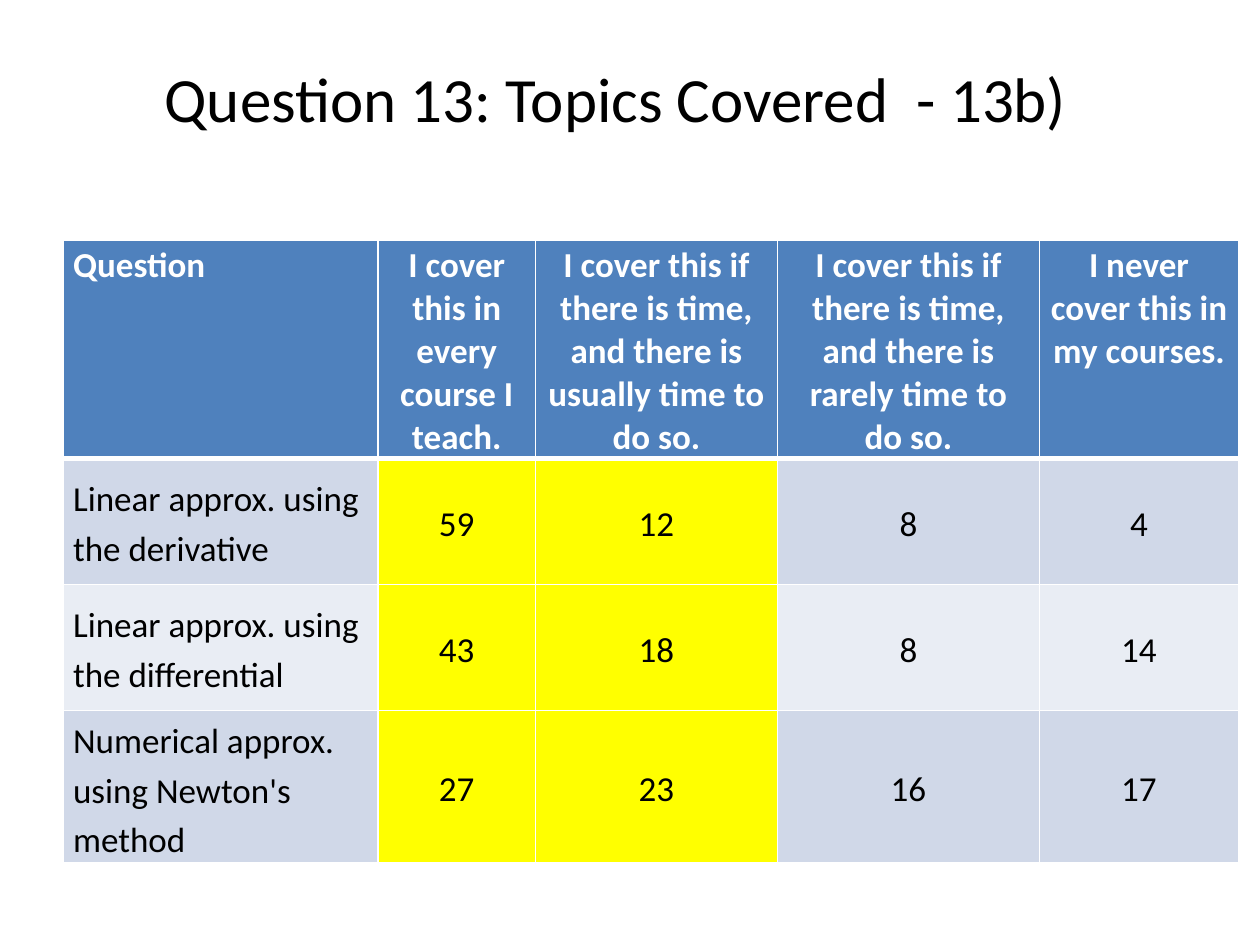
from lxml import etree
from pptx import Presentation
from pptx.dml.color import RGBColor
from pptx.enum.text import MSO_ANCHOR as ANCHOR, PP_ALIGN as ALIGN
from pptx.oxml.ns import qn
from pptx.util import Inches, Pt

COLORS = {
    "header": "4F81BD",
    "odd": "D0D8E8",
    "even": "E9EDF4",
    "highlight": "FFFF00",
    "white": "FFFFFF",
    "black": "000000",
}
FONT = "Calibri"


def add_run(p, text, size, color, bold=False):
    r = p.add_run()
    r.text = text
    r.font.name = FONT
    r.font.size = Pt(size)
    r.font.bold = bold
    r.font.color.rgb = RGBColor.from_string(COLORS[color])


def set_border(cell, side, width):
    ln = etree.SubElement(cell._tc.get_or_add_tcPr(), qn(f"a:ln{side}"), w=str(Pt(width)))
    fill = etree.SubElement(ln, qn("a:solidFill"))
    etree.SubElement(fill, qn("a:srgbClr"), val=COLORS["white"])


prs = Presentation()
prs.slide_width, prs.slide_height = Inches(10), Inches(7.5)
s = prs.slides.add_slide(prs.slide_layouts[6])

# Title
title = s.shapes.add_textbox(Inches(0.5), Inches(0.3), Inches(9), Inches(0.95))
tf = title.text_frame
tf.word_wrap = True
tf.vertical_anchor = ANCHOR.MIDDLE
p = tf.paragraphs[0]
p.alignment = ALIGN.CENTER
add_run(p, "Question 13: Topics Covered  - 13b)  ", 36, "black")

# Table of answers
rows = [
    ["Question",
     "I cover this in every course I teach.",
     "I cover this if there is time, and there is usually time to do so.",
     "I cover this if there is time, and there is rarely time to do so.",
     "I never cover this in my courses."],
    ["Linear approx. using the derivative", 59, 12, 8, 4],
    ["Linear approx. using the differential", 43, 18, 8, 14],
    ["Numerical approx. using Newton's method", 27, 23, 16, 17],
]
col_widths = [2.5, 1.25, 1.92, 2.08, 1.58]
row_heights = [1.08, 1, 1, 1]
table = s.shapes.add_table(
    len(rows), len(col_widths), Inches(0.5), Inches(1.91),
    Inches(sum(col_widths)), Inches(sum(row_heights))).table
for col, width in zip(table.columns, col_widths):
    col.width = Inches(width)
for row, height in zip(table.rows, row_heights):
    row.height = Inches(height)

for i, values in enumerate(rows):
    is_header = i == 0
    for j, value in enumerate(values):
        cell = table.cell(i, j)
        cell.margin_left = cell.margin_right = Inches(0.08)
        cell.margin_top = cell.margin_bottom = Inches(0.03)
        cell.vertical_anchor = ANCHOR.TOP if is_header else ANCHOR.MIDDLE

        # A thick rule separates the header from the body
        set_border(cell, "L", 1)
        set_border(cell, "R", 1)
        set_border(cell, "T", 3 if i == 1 else 1)
        set_border(cell, "B", 3 if is_header else 1)

        # The two "covered" columns are highlighted
        if is_header:
            fill = "header"
        elif j in (1, 2):
            fill = "highlight"
        else:
            fill = "odd" if i % 2 else "even"
        cell.fill.solid()
        cell.fill.fore_color.rgb = RGBColor.from_string(COLORS[fill])

        p = cell.text_frame.paragraphs[0]
        p.alignment = ALIGN.CENTER if j else ALIGN.LEFT
        if not is_header:
            p.line_spacing = 1.15
        add_run(p, str(value), 20, "white" if is_header else "black", is_header)

prs.save("out.pptx")
